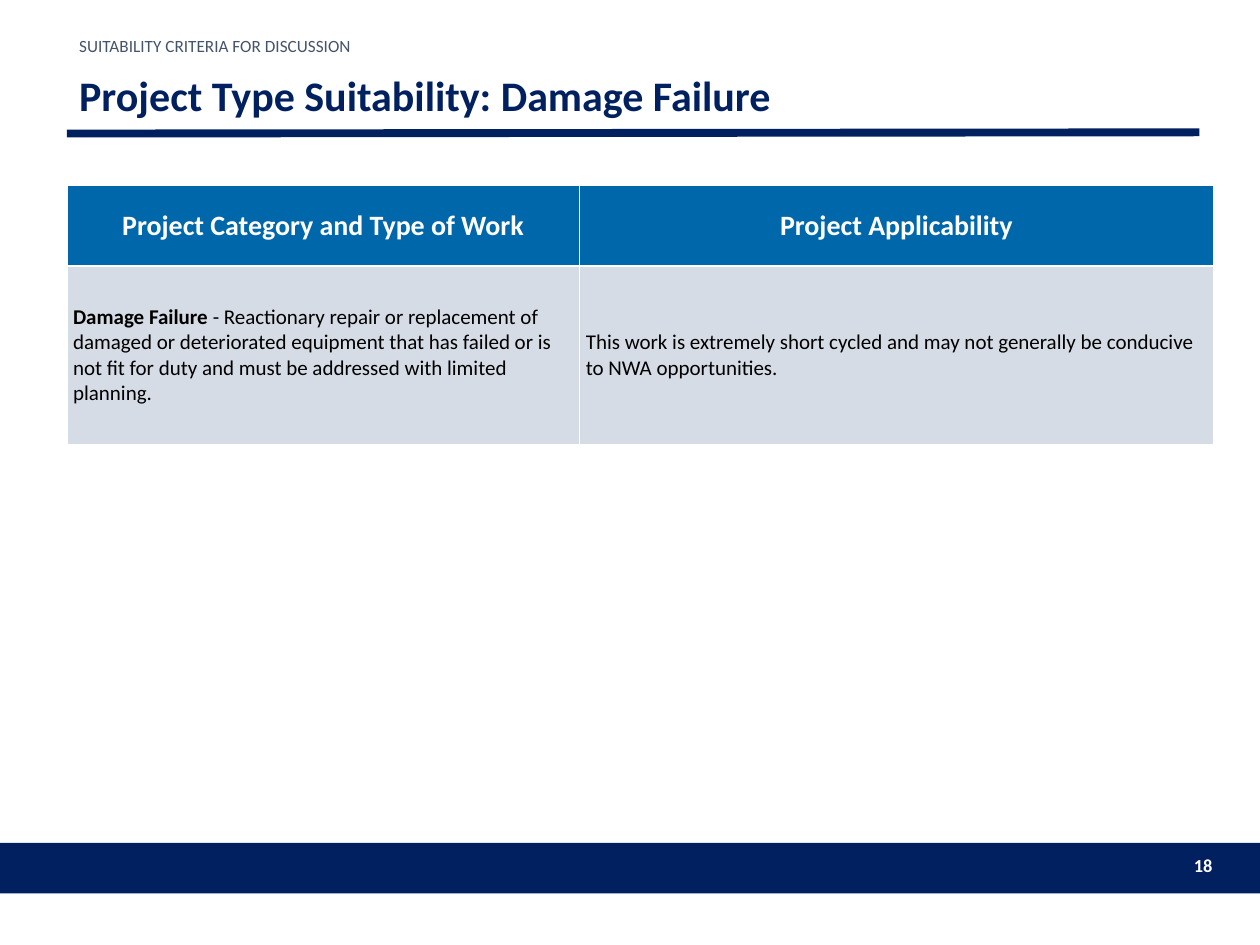
from lxml.etree import SubElement
from pptx import Presentation
from pptx.dml.color import RGBColor
from pptx.enum.shapes import MSO_CONNECTOR as Connector, MSO_SHAPE as Shape
from pptx.enum.text import MSO_ANCHOR as Anchor, PP_ALIGN as Align
from pptx.oxml.ns import qn
from pptx.util import Inches, Pt

KICKER = "SUITABILITY CRITERIA FOR DISCUSSION"
TITLE = "Project Type Suitability: Damage Failure"
PAGE_NUMBER = "18"
HEADERS = ["Project Category and Type of Work", "Project Applicability"]
DETAILS = [
    [
        ("Damage Failure ", True),
        ("- Reactionary repair or replacement of damaged or deteriorated equipment "
         "that has failed or is not fit for duty and must be addressed with limited planning.", False),
    ],
    [("This work is extremely short cycled and may not generally be conducive to NWA opportunities.", False)],
]
COLUMN_WIDTHS = [4.07, 5.03]
ROW_HEIGHTS = [0.64, 1.42]
LEFT, CONTENT_WIDTH = 0.53, 8.99

THEME = {
    "font": "Calibri",
    "navy": "002060", "blue": "0067AB", "pale": "D6DCE5",
    "slate": "44546A", "white": "FFFFFF", "black": "000000",
    "title": 24, "header": 16, "detail": 12, "number": 10.5, "kicker": 9.8,
}


def color(name):
    return RGBColor.from_string(THEME[name])


def write(frame, runs, *, size, ink, align=Align.LEFT, spacing=None):
    frame.word_wrap = True
    para = frame.paragraphs[0]
    para.alignment = align
    if spacing:
        para.line_spacing = spacing
    for text, bold in runs:
        span = para.add_run()
        span.text = text
        font = span.font
        font.name = THEME["font"]
        font.size = Pt(THEME[size])
        font.bold = bold
        font.color.rgb = color(ink)


def add_text(page, area, text, *, bold=False, anchor=Anchor.TOP, **style):
    box = page.shapes.add_textbox(*map(Inches, area))
    box.text_frame.vertical_anchor = anchor
    write(box.text_frame, [(text, bold)], **style)


def style_cell(cell, fill):
    cell.vertical_anchor = Anchor.MIDDLE
    properties = cell._tc.get_or_add_tcPr()
    for side in ("lnL", "lnR", "lnT", "lnB"):
        border = SubElement(properties, qn(f"a:{side}"), w=str(Pt(1)))
        solid = SubElement(border, qn("a:solidFill"))
        SubElement(solid, qn("a:srgbClr"), val=THEME["white"])
    cell.fill.solid()
    cell.fill.fore_color.rgb = color(fill)


def add_frame(page):
    band = page.shapes.add_shape(Shape.RECTANGLE, *map(Inches, (0, 6.69, 10, 0.4)))
    band.shadow.inherit = False
    band.fill.solid()
    band.fill.fore_color.rgb = color("navy")
    band.line.fill.background()
    add_text(page, (9.31, 6.73, 0.41, 0.29), PAGE_NUMBER, bold=True,
             size="number", ink="white", align=Align.RIGHT)
    ends = (LEFT, 1.06, LEFT + CONTENT_WIDTH, 1.05)
    rule = page.shapes.add_connector(Connector.STRAIGHT, *map(Inches, ends))
    rule.line.color.rgb = color("navy")
    rule.line.width = Pt(4.5)
    SubElement(rule._element.spPr, qn("a:effectLst"))


def add_suitability_table(page):
    area = (LEFT, 1.47, sum(COLUMN_WIDTHS), sum(ROW_HEIGHTS))
    table = page.shapes.add_table(len(ROW_HEIGHTS), len(COLUMN_WIDTHS), *map(Inches, area)).table
    for row, height in zip(table.rows, ROW_HEIGHTS):
        row.height = Inches(height)
    for index, width in enumerate(COLUMN_WIDTHS):
        table.columns[index].width = Inches(width)
        header, detail = table.cell(0, index), table.cell(1, index)
        style_cell(header, "blue")
        write(header.text_frame, [(HEADERS[index], True)], size="header", ink="white", align=Align.CENTER)
        style_cell(detail, "pale")
        detail.margin_left = detail.margin_right = Inches(0.05)
        detail.margin_top = detail.margin_bottom = Inches(0.05)
        write(detail.text_frame, DETAILS[index], size="detail", ink="black")


def main():
    deck = Presentation()
    deck.slide_width, deck.slide_height = Inches(10), Inches(7.5)
    page = deck.slides.add_slide(deck.slide_layouts[6])
    add_frame(page)
    add_text(page, (LEFT, 0.5, CONTENT_WIDTH, 0.55), TITLE, bold=True,
             anchor=Anchor.MIDDLE, size="title", ink="navy", spacing=0.9)
    add_text(page, (LEFT, 0.28, CONTENT_WIDTH, 0.22), KICKER,
             size="kicker", ink="slate", spacing=0.7)
    add_suitability_table(page)
    deck.save("out.pptx")


if __name__ == "__main__":
    main()
